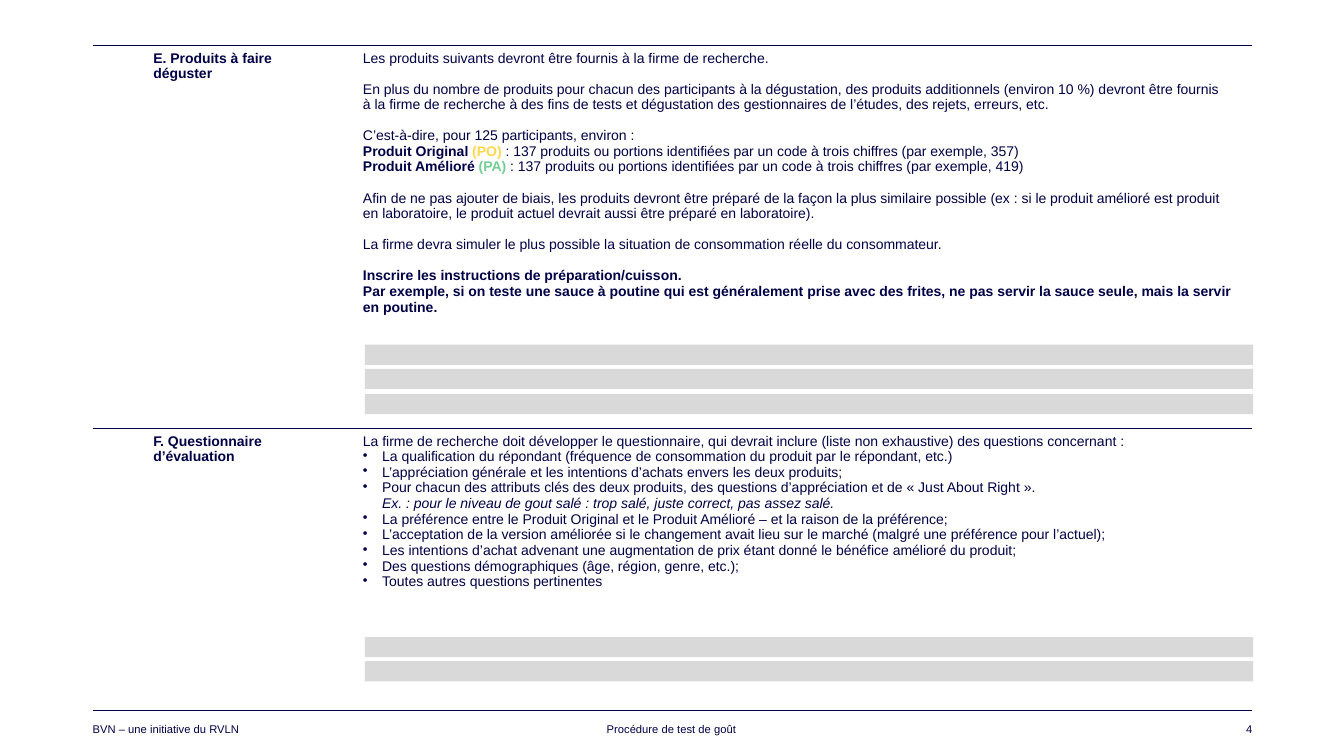
import pptx
import pptx.dml.color
import pptx.enum.shapes
import pptx.enum.text
import pptx.oxml
import pptx.oxml.ns
import pptx.util

COLORS = {"navy": "000046", "yellow": "FFD74B", "green": "73CD96", "gray": "D9D9D9", "white": "FFFFFF"}
EMU_PER_PX = 9144
LEFT, RIGHT = 92, 1242


class Page:
    """Draws styled elements on one slide, with lengths in px of 1/100 inch."""

    def __init__(self, slide, font="Arial"):
        self.slide = slide
        self.font = font

    def px(self, *lengths):
        return [pptx.util.Emu(length * EMU_PER_PX) for length in lengths]

    def color(self, name):
        return pptx.dml.color.RGBColor.from_string(COLORS[name])

    def run(self, paragraph, text, size, bold=False, italic=False, color="navy"):
        for index, line in enumerate(text.split("\n")):
            if index:
                paragraph.add_line_break()
            run = paragraph.add_run()
            run.text = line
            run.font.name = self.font
            run.font.size = pptx.util.Pt(size)
            run.font.bold = bold
            run.font.italic = italic
            run.font.color.rgb = self.color(color)

    def rule(self, left, right, y, weight):
        rule = self.slide.shapes.add_connector(
            pptx.enum.shapes.MSO_CONNECTOR.STRAIGHT, *self.px(left, y, right, y))
        rule.line.color.rgb = self.color("navy")
        rule.line.width = pptx.util.Pt(weight)
        properties = rule._element.spPr
        properties.append(properties.makeelement(pptx.oxml.ns.qn("a:effectLst"), {}))

    def bar(self, left, top, width, height):
        bar = self.slide.shapes.add_shape(
            pptx.enum.shapes.MSO_SHAPE.RECTANGLE, *self.px(left, top, width, height))
        bar.shadow.inherit = False
        bar.fill.solid()
        bar.fill.fore_color.rgb = self.color("gray")
        bar.line.fill.background()

    def footer(self, left, width, text, align):
        frame = self.slide.shapes.add_textbox(*self.px(left, 712, width, 24)).text_frame
        frame.word_wrap = True
        frame.paragraphs[0].alignment = align
        self.run(frame.paragraphs[0], text, 8)

    def table(self, left, top, columns, rows):
        table = self.slide.shapes.add_table(
            len(rows), len(columns), *self.px(left, top, sum(columns), sum(rows))).table
        table.first_row = False
        table.horz_banding = False
        for column, width in zip(table.columns, self.px(*columns)):
            column.width = width
        for row, height in zip(table.rows, self.px(*rows)):
            row.height = height
        return table

    def cell(self, cell, paragraphs, top, bottom, indent=0):
        cell.fill.background()
        self.borders(cell, top, bottom)
        for index, (runs, gap, bullet) in enumerate(paragraphs):
            paragraph = cell.text_frame.paragraphs[0] if index == 0 else cell.text_frame.add_paragraph()
            paragraph.space_before = pptx.util.Pt(gap)
            self.indent(paragraph, indent, bullet)
            for text, style in runs:
                self.run(paragraph, text, 10, **style)

    def indent(self, paragraph, indent, bullet):
        hang = 19 if bullet else 0
        properties = paragraph._p.get_or_add_pPr()
        properties.set("marL", str((indent + hang) * EMU_PER_PX))
        properties.set("indent", str(-hang * EMU_PER_PX))
        if bullet:
            properties.append(pptx.oxml.parse_xml(
                f'<a:buChar {pptx.oxml.ns.nsdecls("a")} char="•"/>'))

    def borders(self, cell, top, bottom):
        properties = cell._tc.get_or_add_tcPr()
        for index, (side, edge) in enumerate(zip("LRTB", (None, None, top, bottom))):
            color, weight = edge or (None, 0)
            fill = f'<a:solidFill><a:srgbClr val="{COLORS[color]}"/></a:solidFill>' if edge else "<a:noFill/>"
            properties.insert(index, pptx.oxml.parse_xml(
                f'<a:ln{side} {pptx.oxml.ns.nsdecls("a")} w="{int(weight * 12700)}">{fill}</a:ln{side}>'))


BOLD = {"bold": True}
GAP = 11


def line(text, gap=0, bullet=False, **style):
    return [(text, style)], gap, bullet


def product(name, code, color, sample, gap=0):
    detail = f": 137 produits ou portions identifiées par un code à trois chiffres (par exemple, {sample})"
    return [(name, BOLD), (code, {"bold": True, "color": color}), (detail, {})], gap, False


TASTING = [
    line("Les produits suivants devront être fournis à la firme de recherche."),
    line("En plus du nombre de produits pour chacun des participants à la dégustation, des produits "
         "additionnels (environ 10 %) devront être fournis \nà la firme de recherche à des fins de tests et "
         "dégustation des gestionnaires de l’études, des rejets, erreurs, etc. ", GAP),
    line("C’est-à-dire, pour 125 participants, environ :", GAP),
    product("Produit Original ", "(PO) ", "yellow", 357),
    product("Produit Amélioré ", "(PA) ", "green", 419),
    line("Afin de ne pas ajouter de biais, les produits devront être préparé de la façon la plus similaire "
         "possible (ex : si le produit amélioré est produit \nen laboratoire, le produit actuel devrait aussi "
         "être préparé en laboratoire). ", GAP),
    line("La firme devra simuler le plus possible la situation de consommation réelle du consommateur.", GAP),
    line("Inscrire les instructions de préparation/cuisson.", GAP, **BOLD),
    line("Par exemple, si on teste une sauce à poutine qui est généralement prise avec des frites, "
         "ne pas servir la sauce seule, mais la servir en poutine.", **BOLD),
]
ATTRIBUTES = [
    ("Pour chacun des attributs clés des deux produits, des questions d’appréciation et de "
     "« Just About Right ». \n", {}),
    ("Ex. : pour le niveau de gout salé : trop salé, juste correct, pas assez salé. ", {"italic": True}),
]
QUESTIONS = [
    line("La firme de recherche doit développer le questionnaire, qui devrait inclure (liste non exhaustive) "
         "des questions concernant :"),
    line("La qualification du répondant (fréquence de consommation du produit par le répondant, etc.)", bullet=True),
    line("L’appréciation générale et les intentions d’achats envers les deux produits;", bullet=True),
    (ATTRIBUTES, 0, True),
    line("La préférence entre le Produit Original et le Produit Amélioré – et la raison de la préférence;",
         bullet=True),
    line("L’acceptation de la version améliorée si le changement avait lieu sur le marché "
         "(malgré une préférence pour l’actuel);", bullet=True),
    line("Les intentions d’achat advenant une augmentation de prix étant donné le bénéfice amélioré du produit;",
         bullet=True),
    line("Des questions démographiques (âge, région, genre, etc.);", bullet=True),
    line("Toutes autres questions pertinentes", bullet=True),
]
SECTIONS = [
    ("E. Produits à faire \ndéguster", TASTING, ("navy", 0.5)),
    ("F. Questionnaire \nd’évaluation", QUESTIONS, ("white", 1)),
]
ALIGN = pptx.enum.text.PP_ALIGN
FOOTERS = [
    (82, 302, "BVN – une initiative du RVLN", ALIGN.LEFT),
    (441, 450, "Procédure de test de goût", ALIGN.CENTER),
    (950, 302, "4", ALIGN.RIGHT),
]


def main():
    deck = pptx.Presentation()
    deck.slide_width = pptx.util.Inches(13.33)
    deck.slide_height = pptx.util.Inches(7.5)
    page = Page(deck.slides.add_slide(deck.slide_layouts[6]))

    page.rule(LEFT, RIGHT, 705, 0.75)
    procedure = page.table(LEFT, 45, [258, 892], [380, 233])
    for row, (heading, content, bottom) in enumerate(SECTIONS):
        page.cell(procedure.cell(row, 0), [line(heading, **BOLD)], ("navy", 0.5), bottom, indent=50)
        page.cell(procedure.cell(row, 1), content, ("navy", 0.5), bottom)
    for footer in FOOTERS:
        page.footer(*footer)
    for answers_top, count in [(342, 3), (632, 2)]:
        for index in range(count):
            page.bar(362, answers_top + index * 49 // 2, 881, 20)

    deck.save("out.pptx")


if __name__ == "__main__":
    main()
